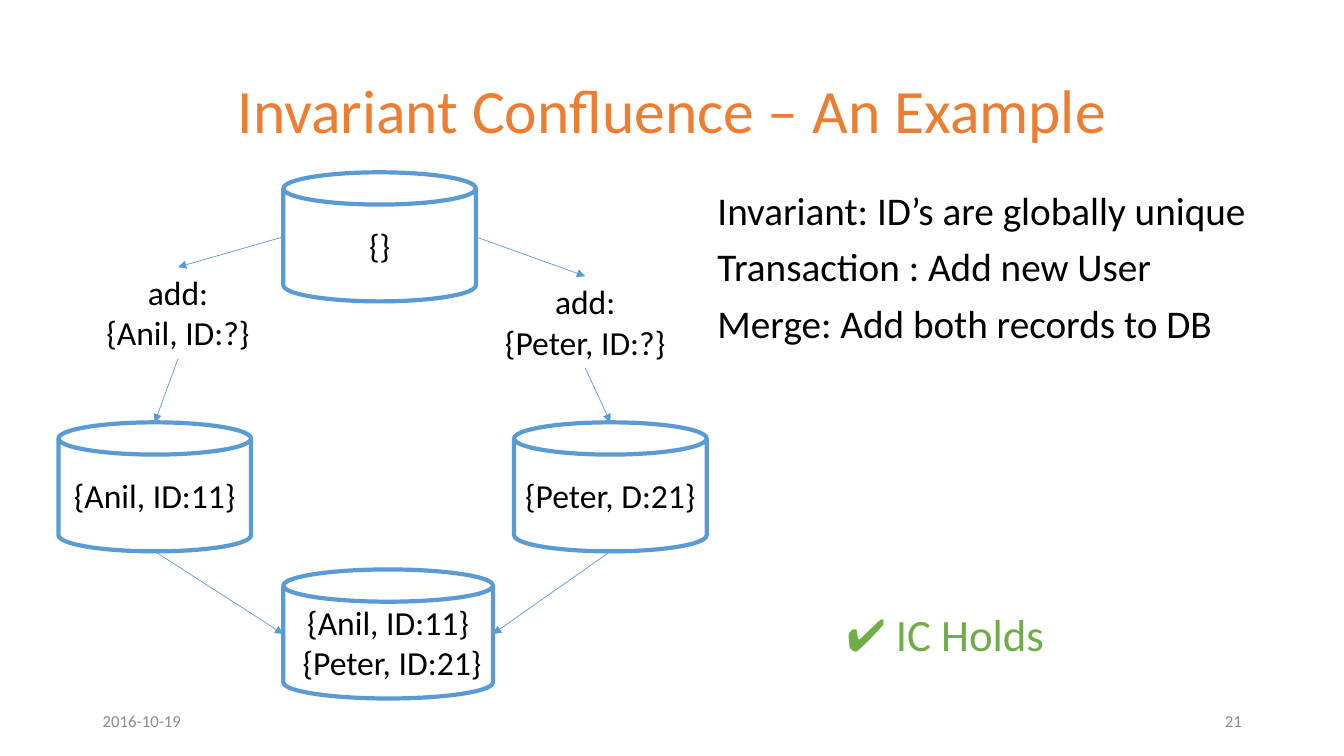
from dataclasses import dataclass

from lxml import etree
from pptx import Presentation
from pptx import util as u
from pptx.dml.color import RGBColor
from pptx.enum import shapes, text
from pptx.oxml import ns

MID, LEFT, RIGHT = text.PP_ALIGN.CENTER, text.PP_ALIGN.LEFT, text.PP_ALIGN.RIGHT


@dataclass(frozen=True)
class Theme:
    face: str = "Calibri"
    ink: str = "000000"
    paper: str = "FFFFFF"
    head: str = "ED7D31"
    edge: str = "5B9BD5"
    good: str = "70AD47"
    mute: str = "8C8C8C"
    title: int = 44
    mark: int = 32
    body: int = 28
    label: int = 24
    foot: int = 12
    thick: float = 3
    thin: float = 0.5


def apply(item, form):
    for key, value in form.items():
        setattr(item, key, value)


class Deck:
    """Places elements by percent of the slide's width and height."""

    def __init__(self, theme):
        self.theme = theme
        self.show = Presentation()
        apply(self.show, {"slide_width": u.Inches(13.333), "slide_height": u.Inches(7.5)})
        self.slide = self.show.slides.add_slide(self.show.slide_layouts[6])

    def place(self, box):
        sides = (self.show.slide_width, self.show.slide_height) * 2
        return [round(side * part / 100) for side, part in zip(sides, box)]

    def letter(self, shape, lines, size, color, align=MID, wrap=True,
               anchor=text.MSO_ANCHOR.MIDDLE, **para):
        """Set the lines in the shape, one paragraph each."""
        frame = shape.text_frame
        apply(frame, {"text": "\n".join(lines), "word_wrap": wrap, "vertical_anchor": anchor})
        for line in frame.paragraphs:
            apply(line, {"alignment": align, **para})
            for run in line.runs:
                apply(run.font, {"name": self.theme.face, "size": u.Pt(size)})
                run.font.color.rgb = RGBColor.from_string(color)

    def text(self, box, lines, size, color, **form):
        shape = self.slide.shapes.add_textbox(*self.place(box))
        self.letter(shape, lines, size, color, **form)
        return shape

    def label(self, box, lines, size, color, align=MID):
        """Add an unwrapped box that fits its text."""
        shape = self.text(box, lines, size, color, align=align, wrap=False,
                          anchor=text.MSO_ANCHOR.TOP)
        shape.text_frame.auto_size = text.MSO_AUTO_SIZE.SHAPE_TO_FIT_TEXT
        return shape

    def store(self, box, lines):
        """Add a database cylinder."""
        shape = self.slide.shapes.add_shape(shapes.MSO_SHAPE.CAN, *self.place(box))
        shape.shadow.inherit = False
        shape.fill.solid()
        shape.fill.fore_color.rgb = RGBColor.from_string(self.theme.paper)
        self.stroke(shape.line, self.theme.thick)
        self.letter(shape, lines, self.theme.label, self.theme.ink)
        return shape

    def stroke(self, line, width):
        line.color.rgb = RGBColor.from_string(self.theme.edge)
        line.width = u.Pt(width)

    def arrow(self, start, side, end, face):
        """Join the named side of one shape to the named side of another."""
        link = self.slide.shapes.add_connector(
            shapes.MSO_CONNECTOR.STRAIGHT, *port(start, side), *port(end, face))
        self.stroke(link.line, self.theme.thin)
        props = link._element.spPr
        etree.SubElement(props.find(ns.qn("a:ln")), ns.qn("a:tailEnd"), type="triangle")
        etree.SubElement(props, ns.qn("a:effectLst"))


def port(shape, side):
    """Return the middle point of a shape's side."""
    across, down = {"top": (1, 0), "left": (0, 1), "base": (1, 2), "right": (2, 1)}[side]
    return shape.left + shape.width * across // 2, shape.top + shape.height * down // 2


def main():
    theme = Theme()
    deck = Deck(theme)
    can_w, can_h = 14.33, 17.07
    mid_x, low_y = 21.08, 55.87
    foot_y, foot_w, foot_h = 92.67, 22.5, 5.33

    deck.text((6.9, 5.33, 86.25, 19.33), ["Invariant Confluence – An Example"],
              theme.title, theme.head, line_spacing=0.9)
    deck.text((52.65, 24.67, 44.7, 65.47),
              ["Invariant: ID’s are globally unique",
               "Transaction : Add new User",
               "Merge: Add both records to DB"],
              theme.body, theme.ink, align=LEFT, anchor=text.MSO_ANCHOR.TOP,
              line_spacing=0.9, space_before=u.Pt(10))
    for left, note, align in ((6.9, "2016-10-19", LEFT), (70.65, "21", RIGHT)):
        deck.text((left, foot_y, foot_w, foot_h), [note], theme.foot, theme.mute, align=align)

    start = deck.store((mid_x, 22.8, can_w, can_h), ["{}"])
    merge = deck.store((mid_x, 75.33, 15.6, can_h), ["{Anil, ID:11}", " {Peter, ID:21} "])
    branches = (
        ("left", (7.13, 35.33, 12.23, 12.13), "{Anil, ID:?}", 4.35, "{Anil, ID:11}"),
        ("right", (36.75, 36.53, 13.58, 12.13), "{Peter, ID:?}", 38.25, "{Peter, D:21}"),
    )
    for side, box, user, left, record in branches:
        add = deck.label(box, ["add:", user], theme.label, theme.ink)
        store = deck.store((left, low_y, can_w, can_h), [record])
        deck.arrow(start, side, add, "top")
        deck.arrow(add, "base", store, "top")
        deck.arrow(store, "base", merge, side)

    deck.label((62.25, 79.6, 16.8, 8.53), ["✔️ IC Holds"], theme.mark, theme.good, align=LEFT)
    deck.show.save("out.pptx")


if __name__ == "__main__":
    main()
